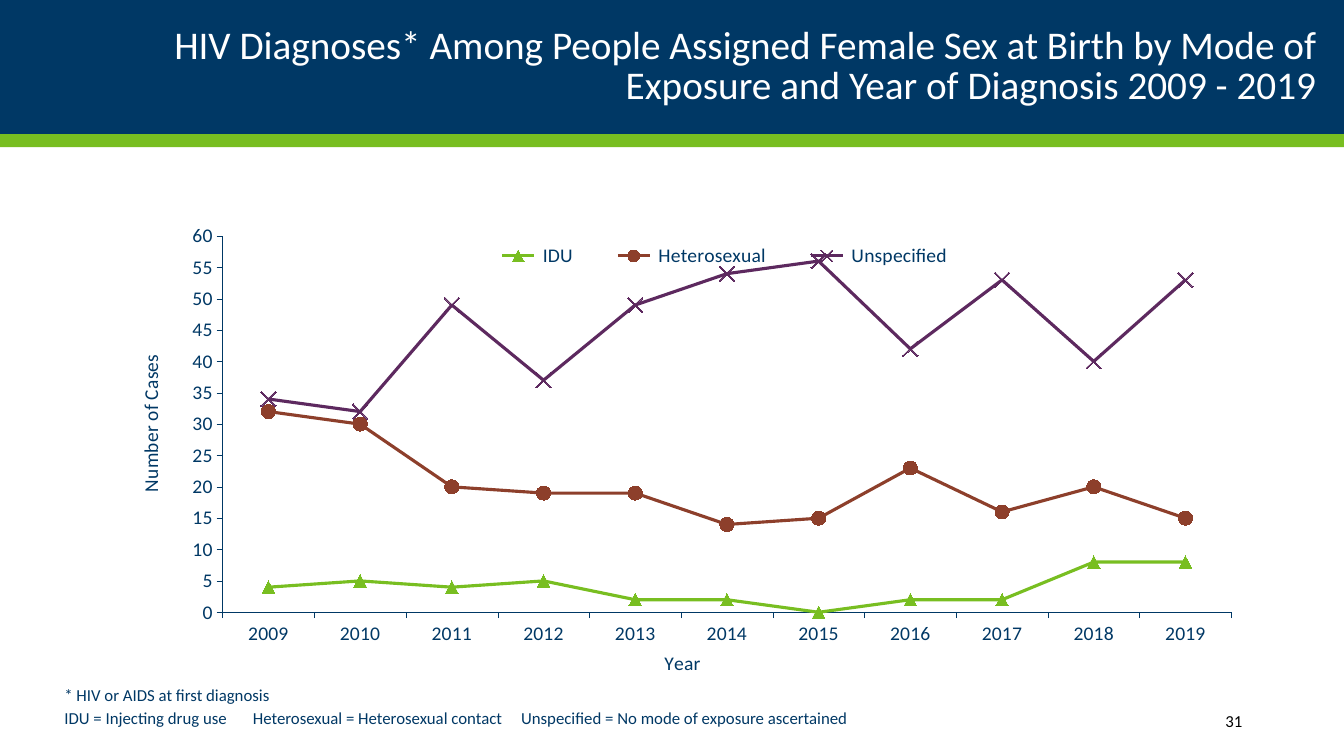
from dataclasses import dataclass

from pptx import Presentation
from pptx.chart.data import CategoryChartData
from pptx.dml.color import RGBColor
from pptx.enum.chart import XL_CHART_TYPE, XL_LEGEND_POSITION, XL_MARKER_STYLE, XL_TICK_MARK
from pptx.enum.shapes import MSO_SHAPE
from pptx.enum.text import MSO_ANCHOR, PP_ALIGN
from pptx.oxml import parse_xml
from pptx.oxml.ns import nsdecls, qn
from pptx.util import Inches, Pt

NAVY = RGBColor(0x00, 0x38, 0x65)
GREEN = RGBColor(0x78, 0xBE, 0x21)
BROWN = RGBColor(0x8D, 0x3F, 0x2B)
PURPLE = RGBColor(0x5D, 0x29, 0x5F)
WHITE = RGBColor(0xFF, 0xFF, 0xFF)
BLACK = RGBColor(0x00, 0x00, 0x00)
FONT = "Calibri"


@dataclass
class Band:
    top: float
    height: float
    color: RGBColor


@dataclass
class Label:
    place: tuple[float, float, float, float]
    lines: list[str]
    size: int
    color: RGBColor
    align: PP_ALIGN = PP_ALIGN.LEFT
    line_spacing: float = 1.0
    space_before: int = 0
    tab_stops: tuple[float, ...] = ()


@dataclass
class Exposure:
    name: str
    cases: list[int]
    color: RGBColor
    marker: XL_MARKER_STYLE
    marker_size: int


BANDS = [Band(0, 1.33, NAVY), Band(1.33, 0.13, GREEN)]

LABELS = [
    Label((0.92, 0.17, 12.23, 1),
          ["HIV Diagnoses* Among People Assigned Female Sex at Birth by Mode of "
           "Exposure and Year of Diagnosis 2009 - 2019"],
          28, WHITE, PP_ALIGN.RIGHT, 0.85),
    Label((0.54, 6.43, 12.07, 1.2),
          ["* HIV or AIDS at first diagnosis",
           "IDU = Injecting drug use\tHeterosexual = Heterosexual contact\t"
           "Unspecified = No mode of exposure ascertained"],
          12, NAVY, line_spacing=0.7, space_before=6, tab_stops=(1.87, 4.53)),
    Label((10.82, 6.95, 1.6, 0.4), ["31"], 12, BLACK, PP_ALIGN.RIGHT),
]

YEARS = [str(year) for year in range(2009, 2020)]
EXPOSURES = [
    Exposure(" IDU", [4, 5, 4, 5, 2, 2, 0, 2, 2, 8, 8],
             GREEN, XL_MARKER_STYLE.TRIANGLE, 9),
    Exposure(" Heterosexual", [32, 30, 20, 19, 19, 14, 15, 23, 16, 20, 15],
             BROWN, XL_MARKER_STYLE.CIRCLE, 10),
    Exposure(" Unspecified", [34, 32, 49, 37, 49, 54, 56, 42, 53, 40, 53],
             PURPLE, XL_MARKER_STYLE.X, 11),
]


def style_font(font, size: int, color: RGBColor) -> None:
    font.name = FONT
    font.size = Pt(size)
    font.bold = False
    font.color.rgb = color


def add_band(page, band: Band) -> None:
    shape = page.shapes.add_shape(MSO_SHAPE.RECTANGLE, 0, Inches(band.top),
                                  Inches(13.33), Inches(band.height))
    shape.shadow.inherit = False
    shape.fill.solid()
    shape.fill.fore_color.rgb = band.color
    shape.line.fill.background()


def add_label(page, label: Label) -> None:
    box = page.shapes.add_textbox(*map(Inches, label.place))
    frame = box.text_frame
    frame.word_wrap = True
    frame.vertical_anchor = MSO_ANCHOR.MIDDLE
    frame.text = "\n".join(label.lines)
    for para in frame.paragraphs:
        para.alignment = label.align
        para.line_spacing = label.line_spacing
        para.space_before = Pt(label.space_before)
        if label.tab_stops:
            stops = "".join(f'<a:tab pos="{Inches(stop)}" algn="l"/>' for stop in label.tab_stops)
            para._p.get_or_add_pPr().append(
                parse_xml(f'<a:tabLst {nsdecls("a")}>{stops}</a:tabLst>'))
        for span in para.runs:
            style_font(span.font, label.size, label.color)


def set_layout(element, following: str, target: str = "", **fractions: float) -> None:
    """Place a chart part by fractions of the chart area."""
    for old in element.findall(qn("c:layout")):
        element.remove(old)
    inner = f'<c:layoutTarget val="{target}"/>' if target else ""
    inner += "".join(f'<c:{key}Mode val="edge"/>' for key in "xy")
    inner += "".join(f'<c:{key} val="{value}"/>' for key, value in fractions.items())
    element.find(qn(following)).addprevious(parse_xml(
        f'<c:layout {nsdecls("c")}><c:manualLayout>{inner}</c:manualLayout></c:layout>'))


def style_axis(axis, title: str, x: float, y: float) -> None:
    axis.has_major_gridlines = False
    axis.major_tick_mark = XL_TICK_MARK.OUTSIDE
    axis.minor_tick_mark = XL_TICK_MARK.NONE
    axis.format.line.color.rgb = NAVY
    axis.format.line.width = Pt(0.25)
    style_font(axis.tick_labels.font, 14, NAVY)
    frame = axis.axis_title.text_frame
    frame.text = title
    style_font(frame.paragraphs[0].runs[0].font, 14, NAVY)
    set_layout(axis.axis_title._element, "c:overlay", x=x, y=y)


def add_cases_chart(page) -> None:
    data = CategoryChartData()
    data.categories = YEARS
    for exposure in EXPOSURES:
        data.add_series(exposure.name, exposure.cases)
    chart = page.shapes.add_chart(XL_CHART_TYPE.LINE_MARKERS, Inches(0.92), Inches(2),
                                  Inches(11.5), Inches(4.76), data).chart
    chart.has_title = False
    style_font(chart.font, 14, NAVY)

    # Axes and plot area
    style_axis(chart.category_axis, "Year", 0.49, 0.94)
    style_axis(chart.value_axis, "Number of Cases", 0.035, 0.32)
    chart.value_axis.minimum_scale = 0
    chart.value_axis.maximum_scale = 60
    chart.value_axis.major_unit = 5
    plot_area = chart._chartSpace.chart.plotArea
    set_layout(plot_area, "c:lineChart", "inner", x=0.112, y=0.073, w=0.87, h=0.796)

    # Legend
    chart.has_legend = True
    chart.legend.position = XL_LEGEND_POSITION.RIGHT
    chart.legend.include_in_layout = False
    style_font(chart.legend.font, 14, NAVY)
    set_layout(chart.legend._element, "c:overlay", x=0.32, y=0.08, w=0.45, h=0.07)

    # Series
    chart.plots[0].vary_by_categories = False
    for series, exposure in zip(chart.plots[0].series, EXPOSURES):
        series.smooth = False
        series.format.line.color.rgb = exposure.color
        series.format.line.width = Pt(2.25)
        marker = series.marker
        marker.style = exposure.marker
        marker.size = exposure.marker_size
        marker.format.line.color.rgb = exposure.color
        if exposure.marker == XL_MARKER_STYLE.X:
            marker.format.fill.background()
        else:
            marker.format.fill.solid()
            marker.format.fill.fore_color.rgb = exposure.color


def main() -> None:
    deck = Presentation()
    deck.slide_width = Inches(13.33)
    deck.slide_height = Inches(7.5)
    page = deck.slides.add_slide(deck.slide_layouts[6])
    for band in BANDS:
        add_band(page, band)
    for label in LABELS:
        add_label(page, label)
    add_cases_chart(page)
    deck.save("out.pptx")


if __name__ == "__main__":
    main()
